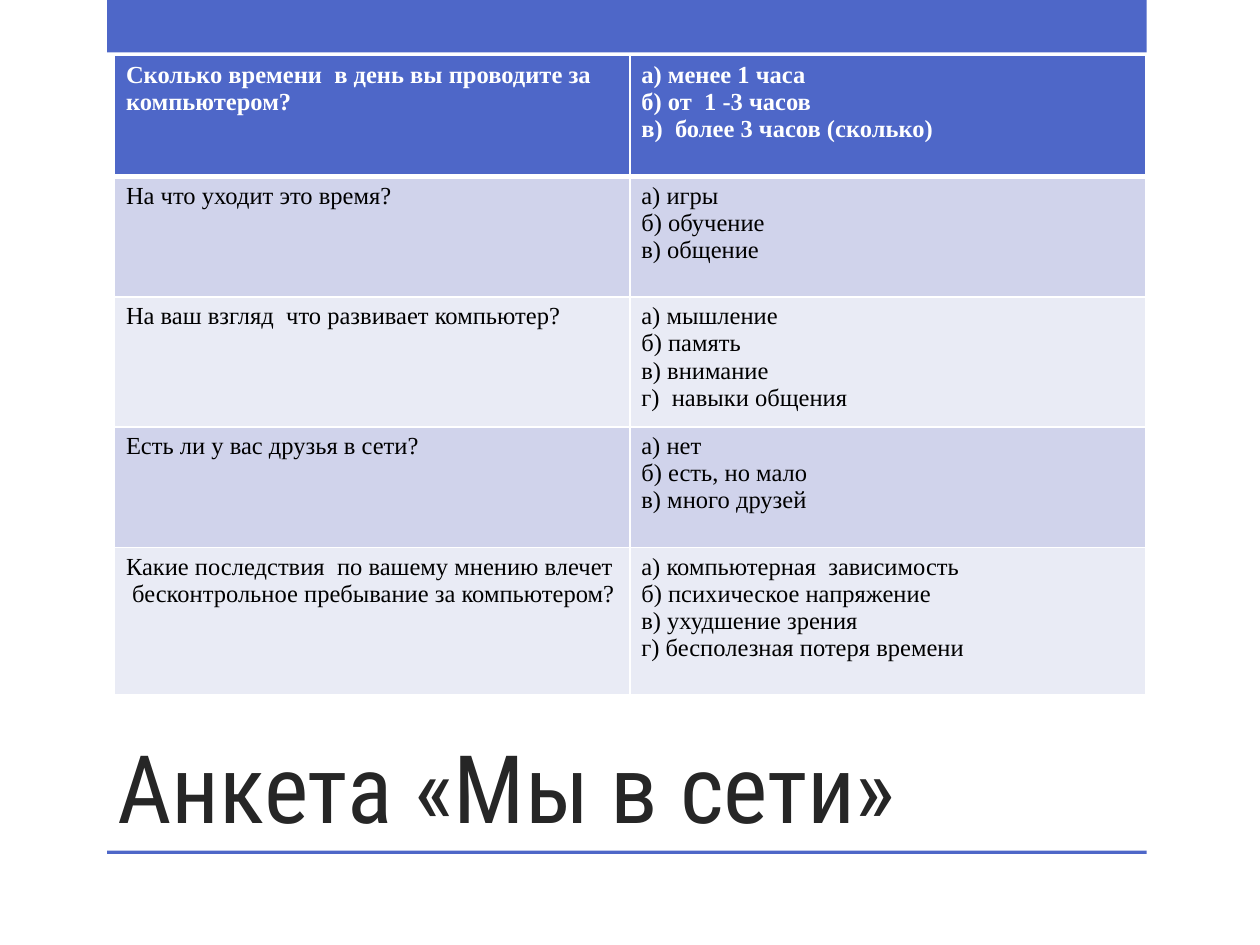
import pptx
import pptx.dml.color
import pptx.enum.shapes
import pptx.enum.text
import pptx.oxml
import pptx.oxml.ns
import pptx.util

Pt = pptx.util.Pt
ACCENT, WHITE, BLACK, TITLE_GRAY = "4E67C8", "FFFFFF", "000000", "262626"
BAND_FILLS = ("E9EBF5", "D0D3EB")
ROW_HEIGHTS = (69, 69, 69, 69, 84)
COLUMN_WIDTH = 294.5
SURVEY = (
    ("Сколько времени  в день вы проводите за компьютером?",
     ("а) менее 1 часа", "б) от  1 -3 часов", "в)  более 3 часов (сколько)")),
    ("На что уходит это время?",
     ("а) игры", "б) обучение", "в) общение")),
    ("На ваш взгляд  что развивает компьютер?",
     ("а) мышление", "б) память", "в) внимание", "г)  навыки общения")),
    ("Есть ли у вас друзья в сети?",
     ("а) нет", "б) есть, но мало", "в) много друзей")),
    ("Какие последствия  по вашему мнению влечет  бесконтрольное пребывание за компьютером?",
     ("а) компьютерная  зависимость", "б) психическое напряжение",
      "в) ухудшение зрения", "г) бесполезная потеря времени")),
)


def color(value):
    """Turn a hex string into a colour."""
    return pptx.dml.color.RGBColor.from_string(value)


def paint(fill, value):
    """Make a fill solid in the given colour."""
    fill.solid()
    fill.fore_color.rgb = color(value)


def style_text(frame, font, size, value, bold=False):
    """Format every run of a text frame."""
    for para in frame.paragraphs:
        for span in para.runs:
            span.font.name = font
            span.font.size = Pt(size)
            span.font.bold = bold
            span.font.color.rgb = color(value)


def add_bar(page, top, height):
    """Add an accent bar across the content width."""
    bar = page.shapes.add_shape(
        pptx.enum.shapes.MSO_SHAPE.RECTANGLE, Pt(61.2), Pt(top), Pt(594), Pt(height))
    bar.shadow.inherit = False
    paint(bar.fill, ACCENT)
    bar.line.fill.background()


def add_title(page, text):
    """Add the bottom-anchored title."""
    box = page.shapes.add_textbox(Pt(59.8), Pt(360), Pt(534), Pt(126))
    frame = box.text_frame
    frame.word_wrap = True
    frame.vertical_anchor = pptx.enum.text.MSO_ANCHOR.BOTTOM
    frame.text = text
    frame.paragraphs[0].line_spacing = 0.9
    style_text(frame, "Roboto Condensed", 54, TITLE_GRAY)


def set_borders(cell, widths):
    """Draw white borders, given as widths by side."""
    properties = cell._tc.get_or_add_tcPr()
    for index, (side, width) in enumerate(widths.items()):
        properties.insert(index, pptx.oxml.parse_xml(
            f'<a:ln{side} {pptx.oxml.ns.nsdecls("a")} w="{Pt(width)}">'
            f'<a:solidFill><a:srgbClr val="{WHITE}"/></a:solidFill></a:ln{side}>'))


def fill_cell(cell, text, row):
    """Write and style one survey cell; row 0 is the header."""
    header = row == 0
    cell.text_frame.text = text
    cell.margin_left = cell.margin_right = Pt(6.5)
    cell.margin_top = cell.margin_bottom = Pt(3.5)
    style_text(cell.text_frame, "Times New Roman", 14, WHITE if header else BLACK, header)
    paint(cell.fill, ACCENT if header else BAND_FILLS[row % 2])
    set_borders(cell, {"L": 1, "R": 1, "T": 3 if row == 1 else 1, "B": 3 if header else 1})


def add_survey(page):
    """Add the table of questions and answers."""
    table = page.shapes.add_table(
        len(SURVEY), 2, Pt(65.5), Pt(31.7), Pt(2 * COLUMN_WIDTH), Pt(sum(ROW_HEIGHTS))).table
    for column in table.columns:
        column.width = Pt(COLUMN_WIDTH)
    for row, (question, answers) in enumerate(SURVEY):
        table.rows[row].height = Pt(ROW_HEIGHTS[row])
        fill_cell(table.cell(row, 0), question, row)
        fill_cell(table.cell(row, 1), "\n".join(answers), row)


def main():
    """Build and save the deck."""
    deck = pptx.Presentation()
    deck.slide_width, deck.slide_height = Pt(720), Pt(540)
    page = deck.slides.add_slide(deck.slide_layouts[6])
    add_bar(page, 0, 30)
    add_bar(page, 486, 2)
    add_title(page, "Анкета «Мы в сети»")
    add_survey(page)
    deck.save("out.pptx")


if __name__ == "__main__":
    main()
